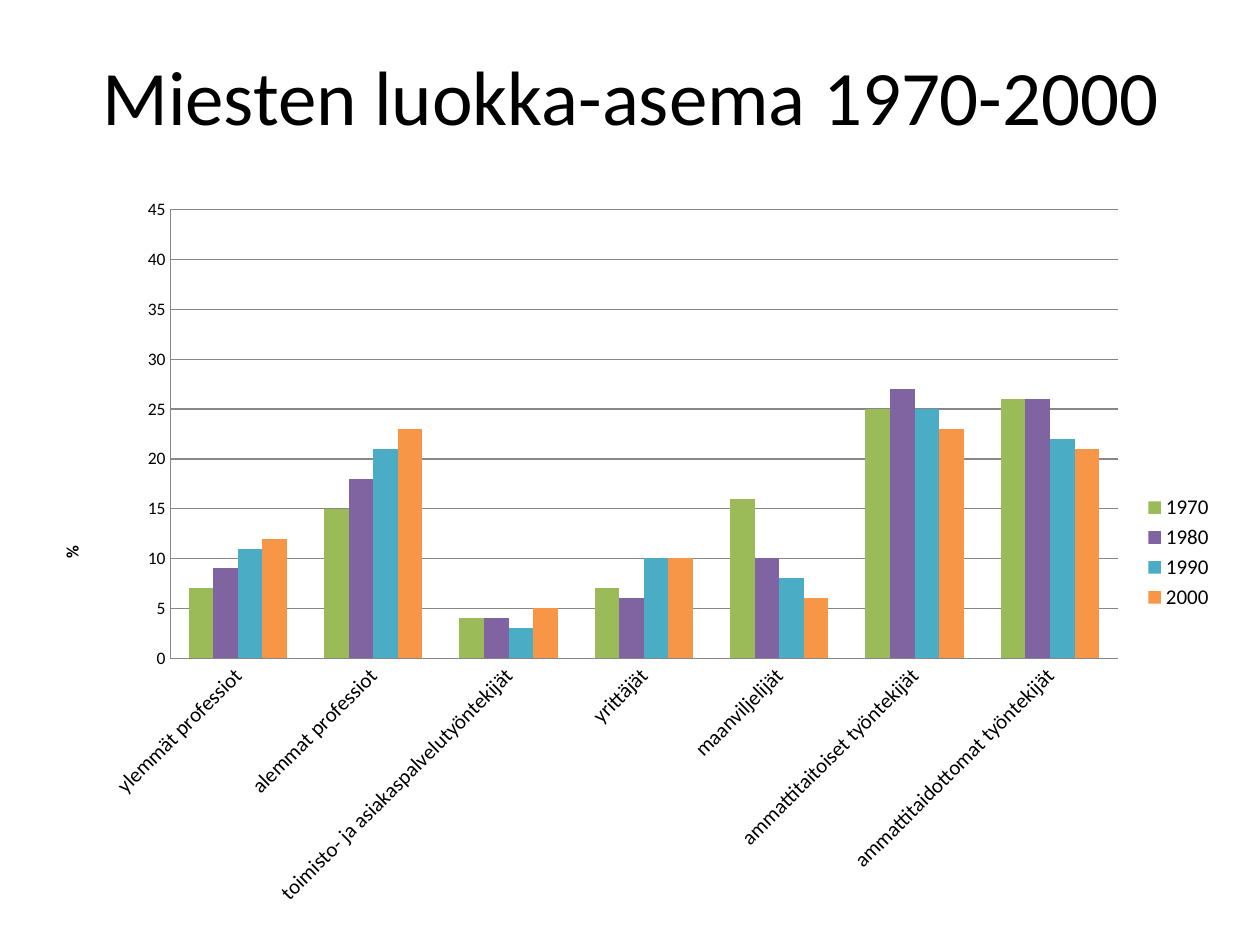
from dataclasses import dataclass

from pptx import Presentation
from pptx.chart.data import CategoryChartData
from pptx.dml.color import RGBColor
from pptx.enum.chart import XL_CHART_TYPE, XL_LEGEND_POSITION, XL_TICK_MARK
from pptx.enum.text import MSO_ANCHOR, PP_ALIGN
from pptx.util import Inches, Pt


@dataclass(frozen=True)
class Theme:
    font: str = "Calibri"
    text: RGBColor = RGBColor(0, 0, 0)
    line: RGBColor = RGBColor(0x87, 0x87, 0x87)
    title_size: Pt = Pt(44)
    label_size: Pt = Pt(12)
    value_size: Pt = Pt(10)
    line_width: Pt = Pt(0.75)


THEME = Theme()

CLASSES = (
    "ylemmät professiot",
    "alemmat professiot",
    "toimisto- ja asiakaspalvelutyöntekijät",
    "yrittäjät",
    "maanviljelijät",
    "ammattitaitoiset työntekijät",
    "ammattitaidottomat työntekijät",
)

YEARS = (
    ("1970", (7, 15, 4, 7, 16, 25, 26), "9BBB59"),
    ("1980", (9, 18, 4, 6, 10, 27, 26), "8064A2"),
    ("1990", (11, 21, 3, 10, 8, 25, 22), "4BACC6"),
    ("2000", (12, 23, 5, 10, 6, 23, 21), "F79646"),
)


def style_font(font, size, bold=False):
    font.name = THEME.font
    font.size = size
    font.bold = bold
    font.color.rgb = THEME.text


def style_line(line):
    line.color.rgb = THEME.line
    line.width = THEME.line_width


def add_title(page, text):
    box = page.shapes.add_textbox(Inches(0.51), Inches(0.13), Inches(9), Inches(1.25))
    frame = box.text_frame
    frame.word_wrap = True
    frame.vertical_anchor = MSO_ANCHOR.MIDDLE
    frame.text = text
    para = frame.paragraphs[0]
    para.alignment = PP_ALIGN.CENTER
    style_font(para.runs[0].font, THEME.title_size)


def style_axis(axis, size):
    axis.major_tick_mark = XL_TICK_MARK.NONE
    axis.minor_tick_mark = XL_TICK_MARK.NONE
    style_font(axis.tick_labels.font, size)
    style_line(axis.format.line)


def style_value_axis(axis):
    style_axis(axis, THEME.value_size)
    axis.minimum_scale = 0
    axis.maximum_scale = 45
    axis.major_unit = 5
    axis.has_major_gridlines = True
    style_line(axis.major_gridlines.format.line)
    frame = axis.axis_title.text_frame
    frame.text = "%"
    style_font(frame.paragraphs[0].runs[0].font, THEME.value_size, bold=True)
    body = frame._txBody.bodyPr
    body.set("rot", "-5400000")
    body.set("vert", "horz")


def style_category_axis(axis):
    style_axis(axis, THEME.label_size)
    body = axis._element.txPr.bodyPr
    body.set("rot", "-2700000")
    body.set("vert", "horz")


def add_class_chart(page):
    data = CategoryChartData()
    data.categories = CLASSES
    for year, shares, _ in YEARS:
        data.add_series(year, shares)
    chart = page.shapes.add_chart(
        XL_CHART_TYPE.COLUMN_CLUSTERED,
        Inches(0.28), Inches(1.47), Inches(9.45), Inches(5.83), data,
    ).chart
    style_font(chart.font, THEME.value_size)
    chart.has_title = False
    chart.has_legend = True
    chart.legend.position = XL_LEGEND_POSITION.RIGHT
    chart.legend.include_in_layout = False
    style_font(chart.legend.font, THEME.label_size)
    style_value_axis(chart.value_axis)
    style_category_axis(chart.category_axis)
    plot = chart.plots[0]
    plot.gap_width = 150
    plot.overlap = 0
    plot.vary_by_categories = False
    for series, (_, _, color) in zip(plot.series, YEARS):
        series.format.fill.solid()
        series.format.fill.fore_color.rgb = RGBColor.from_string(color)


def main():
    deck = Presentation()
    deck.slide_width = Inches(10)
    deck.slide_height = Inches(7.5)
    page = deck.slides.add_slide(deck.slide_layouts[6])
    add_title(page, "Miesten luokka-asema 1970-2000")
    add_class_chart(page)
    deck.save("out.pptx")


if __name__ == "__main__":
    main()
